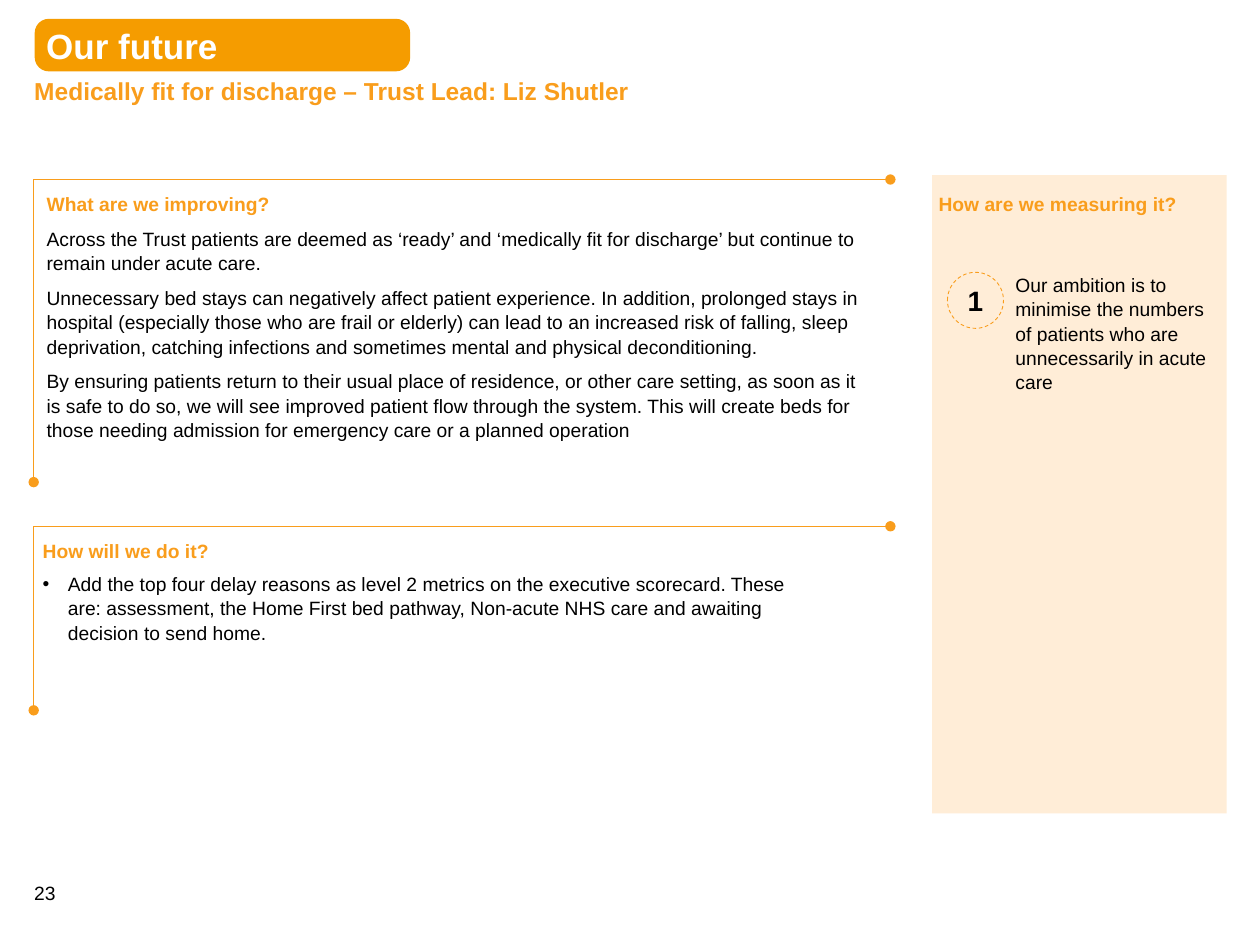
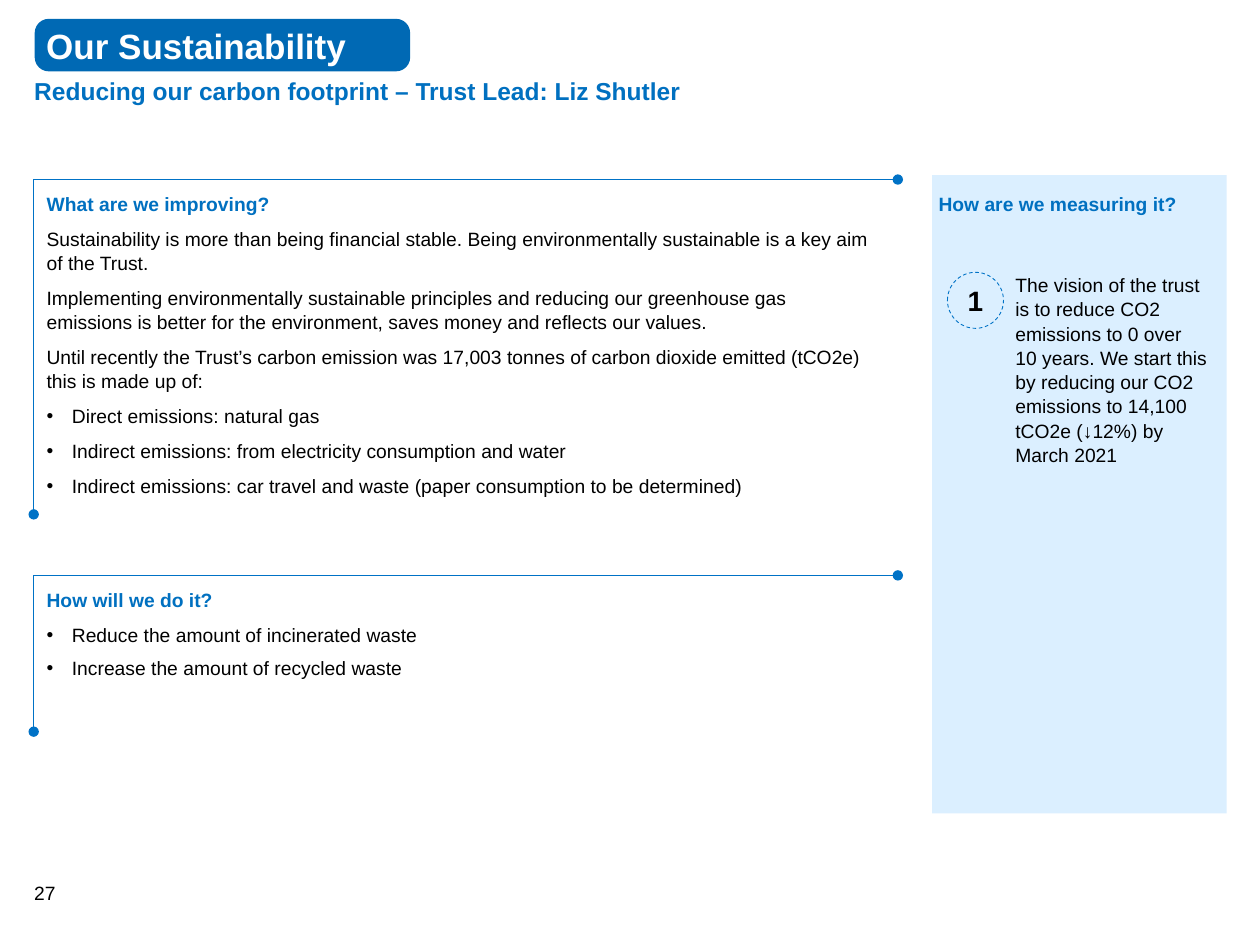
from lxml import etree
from pptx import Presentation
from pptx import util as u
from pptx.dml.color import RGBColor
from pptx.enum import dml, shapes, text
from pptx.oxml import ns

FONT = "Arial"
BLACK = "000000"
WHITE = "FFFFFF"
MARGIN = 0.68
SECTION_TEXT_DROP = 0.24
BULLET_INDENT = u.Cm(0.51)

pages = [
    {
        "number": "23",
        "theme": "Our future",
        "title": "Medically fit for discharge – Trust Lead: Liz Shutler",
        "banner": "F59C00", "accent": "F99D1C", "rule": "F99D1C", "tint": "FFEDD7",
        "rule_end": 17.95,
        "sections": [
            {"top": 3.62, "bottom": 9.72, "left": 0.94, "width": 16.64, "height": 4.88,
             "heading": "What are we improving?", "heading_gap": 6, "gap": 6,
             "prose": [
                 "Across the Trust patients are deemed as ‘ready’ and ‘medically fit for discharge’ but continue to remain under acute care.",
                 "Unnecessary bed stays can negatively affect patient experience. In addition, prolonged stays in hospital (especially those who are frail or elderly) can lead to an increased risk of falling, sleep deprivation, catching infections and sometimes mental and physical deconditioning.",
                 "By ensuring patients return to their usual place of residence, or other care setting, as soon as it is safe to do so, we will see improved patient flow through the system. This will create beds for those needing admission for emergency care or a planned operation",
             ],
             "bullets": []},
            {"top": 10.61, "bottom": 14.32, "left": 0.86, "width": 15.44, "height": 2.06,
             "heading": "How will we do it?", "heading_gap": 5, "gap": 5,
             "prose": [],
             "bullets": [
                 "Add the top four delay reasons as level 2 metrics on the executive scorecard. These are: assessment, the Home First bed pathway, Non-acute NHS care and awaiting decision to send home.",
             ]},
        ],
        "ambition": "Our ambition is to minimise the numbers of patients who are unnecessarily in acute care",
        "ambition_height": 2.36,
    },
    {
        "number": "27",
        "theme": "Our Sustainability",
        "title": "Reducing our carbon footprint – Trust Lead: Liz Shutler",
        "banner": "0069B4", "accent": "0070C0", "rule": "0072C6", "tint": "DBEFFF",
        "rule_end": 18.1,
        "sections": [
            {"top": 3.62, "bottom": 10.37, "left": 0.94, "width": 16.74, "height": 5.99,
             "heading": "What are we improving?", "heading_gap": 6, "gap": 6,
             "prose": [
                 "Sustainability is more than being financial stable. Being environmentally sustainable is a key aim of the Trust.",
                 "Implementing environmentally sustainable principles and reducing our greenhouse gas emissions is better for the environment, saves money and reflects our values.",
                 "Until recently the Trust’s carbon emission was 17,003 tonnes of carbon dioxide emitted (tCO2e) this is made up of:",
             ],
             "bullets": [
                 "Direct emissions: natural gas",
                 "Indirect emissions: from electricity consumption and water",
                 "Indirect emissions: car travel and waste (paper consumption to be determined)",
             ]},
            {"top": 11.6, "bottom": 14.75, "left": 0.94, "width": 16.74, "height": 1.8,
             "heading": "How will we do it?", "heading_gap": 6, "gap": 5,
             "prose": [],
             "bullets": [
                 "Reduce the amount of incinerated waste",
                 "Increase the amount of recycled waste",
             ]},
        ],
        "ambition": "The vision of the trust is to reduce CO2 emissions to 0 over 10 years. We start this by reducing our CO2 emissions to 14,100 tCO2e (↓12%) by March 2021",
        "ambition_height": 3.76,
    },
]


def rgb(value):
    return RGBColor.from_string(value)


def write(shape, lines, inset=0.0, anchor=text.MSO_ANCHOR.TOP):
    frame = shape.text_frame
    margin = u.Cm(inset)
    frame_format = {
        "word_wrap": True, "auto_size": text.MSO_AUTO_SIZE.NONE, "vertical_anchor": anchor,
        "margin_left": margin, "margin_right": margin, "margin_top": margin, "margin_bottom": margin,
    }
    for key, value in frame_format.items():
        setattr(frame, key, value)
    for index, line in enumerate(lines):
        paragraph = frame.add_paragraph() if index else frame.paragraphs[0]
        paragraph.text = line["words"]
        if line.get("bullet"):
            properties = paragraph._p.get_or_add_pPr()
            properties.set("marL", str(BULLET_INDENT))
            properties.set("indent", str(-BULLET_INDENT))
            for tag, attribute, value in (("a:buFont", "typeface", FONT), ("a:buChar", "char", "•")):
                etree.SubElement(properties, ns.qn(tag)).set(attribute, value)
        paragraph_format = {
            "alignment": line.get("align", text.PP_ALIGN.LEFT),
            "line_spacing": line.get("spacing", 1.05),
            "space_before": u.Pt(0),
            "space_after": u.Pt(line.get("after", 0)),
        }
        for key, value in paragraph_format.items():
            setattr(paragraph, key, value)
        font_format = {"name": FONT, "size": u.Pt(line.get("size", 11)), "bold": line.get("bold", False)}
        for key, value in font_format.items():
            setattr(paragraph.font, key, value)
        paragraph.font.color.rgb = rgb(line.get("color", BLACK))


deck = Presentation()
deck.slide_width = u.Cm(25.4)
deck.slide_height = u.Cm(19.05)

for page in pages:
    slide = deck.slides.add_slide(deck.slide_layouts[5])
    accent = page["accent"]

    title = slide.shapes.title
    title_place = {"left": 0.69, "top": 1.5, "width": 18.34, "height": 0.61}
    for key, value in title_place.items():
        setattr(title, key, u.Cm(value))
    write(title, [{"words": page["title"], "size": 14, "bold": True, "color": accent}],
          anchor=text.MSO_ANCHOR.MIDDLE)

    page_number = slide.shapes.add_textbox(*map(u.Cm, (0.69, 17.75, 1.4, 0.48)))
    write(page_number, [{"words": page["number"]}])

    for section in page["sections"]:
        story = slide.shapes.add_textbox(*map(u.Cm, (
            section["left"], section["top"] + SECTION_TEXT_DROP, section["width"], section["height"])))
        lines = [{"words": section["heading"], "bold": True, "color": accent, "after": section["heading_gap"]}]
        for kind in ("prose", "bullets"):
            lines += [{"words": words, "bullet": kind == "bullets", "after": section["gap"]}
                      for words in section[kind]]
        write(story, lines)

        left, top, right, bottom = map(u.Cm, (MARGIN, section["top"], page["rule_end"], section["bottom"]))
        outline = slide.shapes.build_freeform(left, bottom)
        outline.add_line_segments([(left, top), (right, top)], close=False)
        bracket = outline.convert_to_shape()
        bracket.shadow.inherit = False
        bracket.fill.background()
        bracket.line.color.rgb = rgb(page["rule"])
        bracket.line.width = u.Pt(0.5)
        for end in ("a:headEnd", "a:tailEnd"):
            etree.SubElement(bracket.line._ln, ns.qn(end)).set("type", "oval")

    rectangle = shapes.MSO_SHAPE.RECTANGLE
    solids = {}
    for part, preset, place, color in (
        ("panel", rectangle, (18.79, 3.53, 5.94, 12.87), page["tint"]),
        ("badge", shapes.MSO_SHAPE.OVAL, (19.1, 5.49, 1.13, 1.13), page["tint"]),
        ("ambition", rectangle, (20.47, 5.49, 3.89, page["ambition_height"]), page["tint"]),
        ("banner", shapes.MSO_SHAPE.ROUNDED_RECTANGLE, (0.7, 0.38, 7.57, 1.06), page["banner"]),
    ):
        solid = slide.shapes.add_shape(preset, *map(u.Cm, place))
        solid.shadow.inherit = False
        solid.fill.solid()
        solid.fill.fore_color.rgb = rgb(color)
        solid.line.fill.background()
        solids[part] = solid

    badge = solids["badge"]
    badge.line.color.rgb = rgb(page["rule"])
    badge.line.width = u.Pt(0.5)
    badge.line.dash_style = dml.MSO_LINE.DASH
    write(badge, [{"words": "1", "size": 16, "bold": True, "spacing": 1.0, "align": text.PP_ALIGN.CENTER}],
          anchor=text.MSO_ANCHOR.MIDDLE)

    write(solids["ambition"], [{"words": page["ambition"], "after": 6}])

    solids["banner"].adjustments[0] = 0.27
    write(solids["banner"],
          [{"words": page["theme"], "size": 20, "bold": True, "color": WHITE, "spacing": 1.0}],
          inset=0.15, anchor=text.MSO_ANCHOR.MIDDLE)

    measure = slide.shapes.add_textbox(*map(u.Cm, (18.92, 3.86, 5.26, 0.5)))
    write(measure, [{"words": "How are we measuring it?", "bold": True, "color": accent}])

deck.save("out.pptx")
